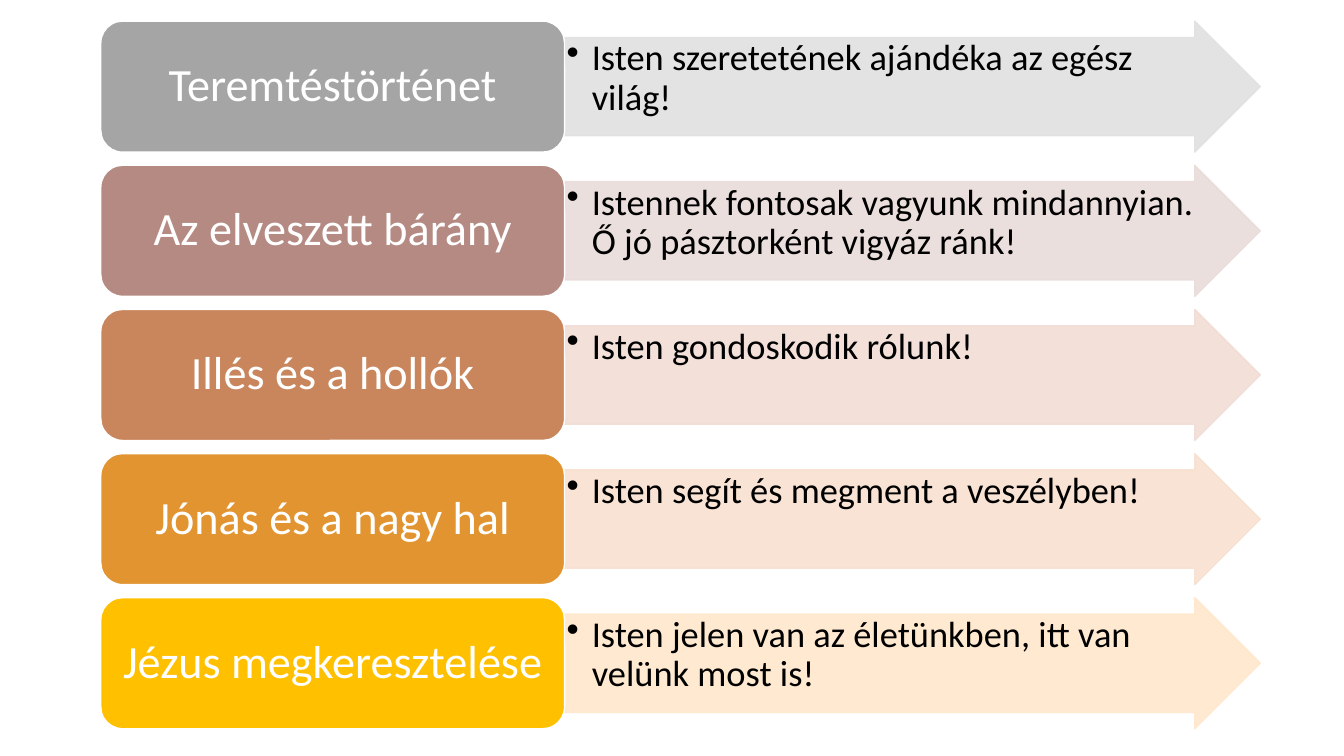
"""Build a slide that pairs five Bible stories with their messages."""
from lxml.etree import SubElement
from pptx import Presentation
from pptx.dml.color import RGBColor
from pptx.enum.shapes import MSO_SHAPE
from pptx.enum.text import MSO_ANCHOR, PP_ALIGN
from pptx.oxml.ns import qn
from pptx.util import Inches, Pt

STORIES = [
    ("Teremtéstörténet", "Isten szeretetének ajándéka az egész világ!", "A5A5A5", "E1E1E1"),
    ("Az elveszett bárány", "Istennek fontosak vagyunk mindannyian. Ő jó pásztorként vigyáz ránk!",
     "B48A83", "E9DCDA"),
    ("Illés és a hollók", "Isten gondoskodik rólunk!", "C9855C", "F1DDD5"),
    ("Jónás és a nagy hal", "Isten segít és megment a veszélyben!", "E19430", "F8E0D0"),
    ("Jézus megkeresztelése", "Isten jelen van az életünkben, itt van velünk most is!",
     "FFC000", "FFE7CB"),
]
THEME = {"font": "Calibri", "title": 33, "body": 26, "light": "FFFFFF", "dark": "000000"}
LEFT, TOP, PITCH, HEIGHT = 1, 0.21, 1.43, 1.3
LABEL, ARROW = 4.6, 6.9


def add_bar(slide, kind, left, top, width, fill, line, alpha=None):
    bar = slide.shapes.add_shape(kind, Inches(left), Inches(top), Inches(width), Inches(HEIGHT))
    bar.shadow.inherit = False
    bar.line.width = Pt(1)
    for paint, color in ((bar.fill, fill), (bar.line.fill, line)):
        paint.solid()
        paint.fore_color.rgb = RGBColor.from_string(color)
    if alpha:
        for tone in bar._element.spPr.iter(qn("a:srgbClr")):
            SubElement(tone, qn("a:alpha"), val=str(alpha * 1000))
    return bar


def write(shape, text, *, size, color, align, anchor, pad, bullet=False):
    frame = shape.text_frame
    frame.word_wrap = True
    frame.vertical_anchor = anchor
    frame.margin_left = frame.margin_right = Inches(pad[0])
    frame.margin_top = frame.margin_bottom = Inches(pad[1])
    para = frame.paragraphs[0]
    para.text = text
    para.alignment = align
    para.line_spacing = 0.9
    if bullet:
        props = para._p.get_or_add_pPr()
        props.set("marL", str(Inches(0.25)))
        props.set("indent", str(Inches(-0.25)))
        SubElement(props, qn("a:buChar"), char="•")
    para.font.name = THEME["font"]
    para.font.size = Pt(size)
    para.font.color.rgb = RGBColor.from_string(color)


def main():
    deck = Presentation()
    deck.slide_width, deck.slide_height = Inches(13.33), Inches(7.5)
    slide = deck.slides.add_slide(deck.slide_layouts[6])
    for row, (story, message, fill, tint) in enumerate(STORIES):
        top = TOP + row * PITCH
        arrow = add_bar(slide, MSO_SHAPE.RIGHT_ARROW, LEFT + LABEL, top, ARROW, tint, tint, 90)
        arrow.adjustments[0] = 0.75
        arrow.adjustments[1] = 0.5
        write(arrow, message, size=THEME["body"], color=THEME["dark"], align=PP_ALIGN.LEFT,
              anchor=MSO_ANCHOR.TOP, pad=(0.02, 0.02), bullet=True)
        label = add_bar(slide, MSO_SHAPE.ROUNDED_RECTANGLE, LEFT, top, LABEL, fill, THEME["light"])
        write(label, story, size=THEME["title"], color=THEME["light"], align=PP_ALIGN.CENTER,
              anchor=MSO_ANCHOR.MIDDLE, pad=(0.14, 0.07))
    deck.save("out.pptx")


if __name__ == "__main__":
    main()
